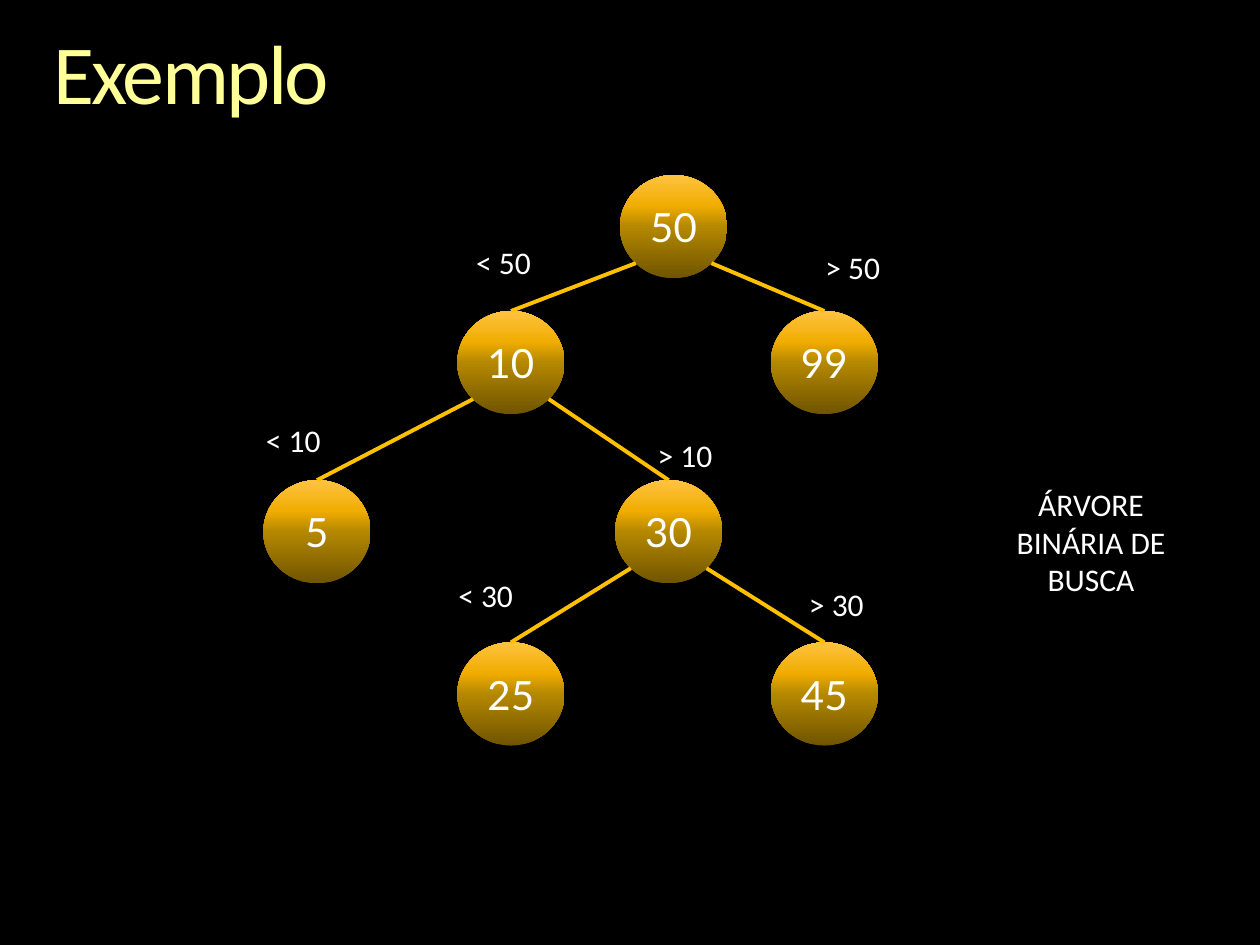
from dataclasses import dataclass
from math import sqrt

from lxml.etree import SubElement
from pptx import Presentation
from pptx.dml.color import RGBColor
from pptx.enum.shapes import MSO_CONNECTOR, MSO_SHAPE
from pptx.enum.text import MSO_ANCHOR, MSO_AUTO_SIZE, PP_ALIGN
from pptx.oxml.ns import qn
from pptx.util import Cm, Pt


@dataclass(frozen=True)
class Theme:
    back: str = "000000"
    text: str = "FFFFFF"
    edge: str = "FFC000"
    gold: tuple = ((0, "705400"), (50, "B48800"), (70, "F0AC00"), (100, "FFC342"))
    glow: tuple = ((0, "FFFFB9"), (36, "FFFF99"), (86, "F6AE1E"))
    font: str = "Calibri"
    key_font: str = "Lato"
    title_size: int = 48
    key_size: int = 23
    label_size: int = 18


NODE_W, NODE_H = 2.16, 2.08
LABEL_W, LABEL_H = 1.96, 1.02

# key: left, top
NODES = {
    50: (12.5, 3.53),
    10: (9.22, 6.27),
    99: (15.54, 6.27),
    5: (5.31, 9.68),
    30: (12.4, 9.68),
    25: (9.22, 12.95),
    45: (15.54, 12.95),
}
# parent, child
EDGES = [(50, 10), (10, 5), (50, 99), (10, 30), (30, 25), (30, 45)]
# text, left, top
LABELS = [
    ("> 50", 16.21, 4.88),
    ("< 50", 9.17, 4.78),
    ("< 10", 4.93, 8.36),
    ("> 10", 12.83, 8.66),
    ("< 30", 8.81, 11.48),
    ("> 30", 15.88, 11.66),
]


def add_blend(parent, stops, angle):
    """Append a linear gradient; the angle is clockwise, in degrees."""
    grad = SubElement(parent, qn("a:gradFill"), rotWithShape="1")
    items = SubElement(grad, qn("a:gsLst"))
    for place, color in stops:
        stop = SubElement(items, qn("a:gs"), pos=str(place * 1000))
        SubElement(stop, qn("a:srgbClr"), val=color)
    SubElement(grad, qn("a:lin"), ang=str(angle * 60000), scaled="0")
    return grad


class Deck:
    """Holds the theme and the slide being drawn."""

    def __init__(self, theme):
        self.theme = theme
        self.file = Presentation()
        self.file.slide_width, self.file.slide_height = Cm(25.4), Cm(19.05)
        self.slide = self.file.slides.add_slide(self.file.slide_layouts[5])
        fill = self.slide.background.fill
        fill.solid()
        fill.fore_color.rgb = RGBColor.from_string(theme.back)

    def set_text(self, frame, text, font, size):
        frame.word_wrap = True
        para = frame.paragraphs[0]
        para.text = text
        para.alignment = PP_ALIGN.CENTER
        para.font.name, para.font.size = font, Pt(size)
        para.font.color.rgb = RGBColor.from_string(self.theme.text)

    def title(self, text):
        box = self.slide.shapes.title
        box.left, box.top, box.width, box.height = Cm(1.07), Cm(0.64), Cm(23.29), Cm(1.85)
        frame = box.text_frame
        frame.margin_left = frame.margin_right = 0
        frame.margin_top = frame.margin_bottom = 0
        frame.vertical_anchor = MSO_ANCHOR.TOP
        frame.auto_size = MSO_AUTO_SIZE.SHAPE_TO_FIT_TEXT
        para = frame.paragraphs[0]
        para.alignment = PP_ALIGN.LEFT
        para.line_spacing = 0.9
        run = para.add_run()
        run.text = text
        props = run.font._element
        props.set("spc", "-150")
        add_blend(props, self.theme.glow, 90)
        run.font.name, run.font.size = self.theme.font, Pt(self.theme.title_size)

    def node(self, key, left, top):
        oval = self.slide.shapes.add_shape(
            MSO_SHAPE.OVAL, Cm(left), Cm(top), Cm(NODE_W), Cm(NODE_H))
        oval.line.fill.background()
        props = oval._element.spPr
        props.find(qn("a:ln")).addprevious(add_blend(props, self.theme.gold, 270))
        self.shade(props)
        oval.text_frame.vertical_anchor = MSO_ANCHOR.MIDDLE
        self.set_text(oval.text_frame, str(key), self.theme.key_font, self.theme.key_size)

    def shade(self, props):
        """Append a soft shadow that falls straight down."""
        effects = SubElement(props, qn("a:effectLst"))
        shadow = SubElement(effects, qn("a:outerShdw"), blurRad=str(Pt(5)),
                            dist=str(Pt(3)), dir="5400000", rotWithShape="0")
        color = SubElement(shadow, qn("a:srgbClr"), val=self.theme.back)
        SubElement(color, qn("a:alpha"), val="45000")

    def edge(self, parent, child):
        """Join the parent's lower diagonal to the top of the child."""
        (px, py), (cx, cy) = parent, child
        side = 1 if cx > px else -1
        x = px + NODE_W / 2 * (1 + side / sqrt(2))
        y = py + NODE_H / 2 * (1 + 1 / sqrt(2))
        line = self.slide.shapes.add_connector(
            MSO_CONNECTOR.STRAIGHT, Cm(x), Cm(y), Cm(cx + NODE_W / 2), Cm(cy))
        line.line.color.rgb = RGBColor.from_string(self.theme.edge)
        line.line.width = Pt(2.25)
        SubElement(line._element.spPr, qn("a:effectLst"))

    def label(self, text, left, top, width=LABEL_W, height=LABEL_H):
        box = self.slide.shapes.add_textbox(Cm(left), Cm(top), Cm(width), Cm(height))
        box.text_frame.auto_size = MSO_AUTO_SIZE.SHAPE_TO_FIT_TEXT
        self.set_text(box.text_frame, text, self.theme.font, self.theme.label_size)


def main():
    deck = Deck(Theme())
    deck.title("Exemplo")
    for key, place in NODES.items():
        deck.node(key, *place)
    for parent, child in EDGES:
        deck.edge(NODES[parent], NODES[child])
    deck.label("ÁRVORE BINÁRIA DE BUSCA", 19.66, 9.65, 4.67, 2.57)
    for label in LABELS:
        deck.label(*label)
    deck.file.save("out.pptx")


if __name__ == "__main__":
    main()
